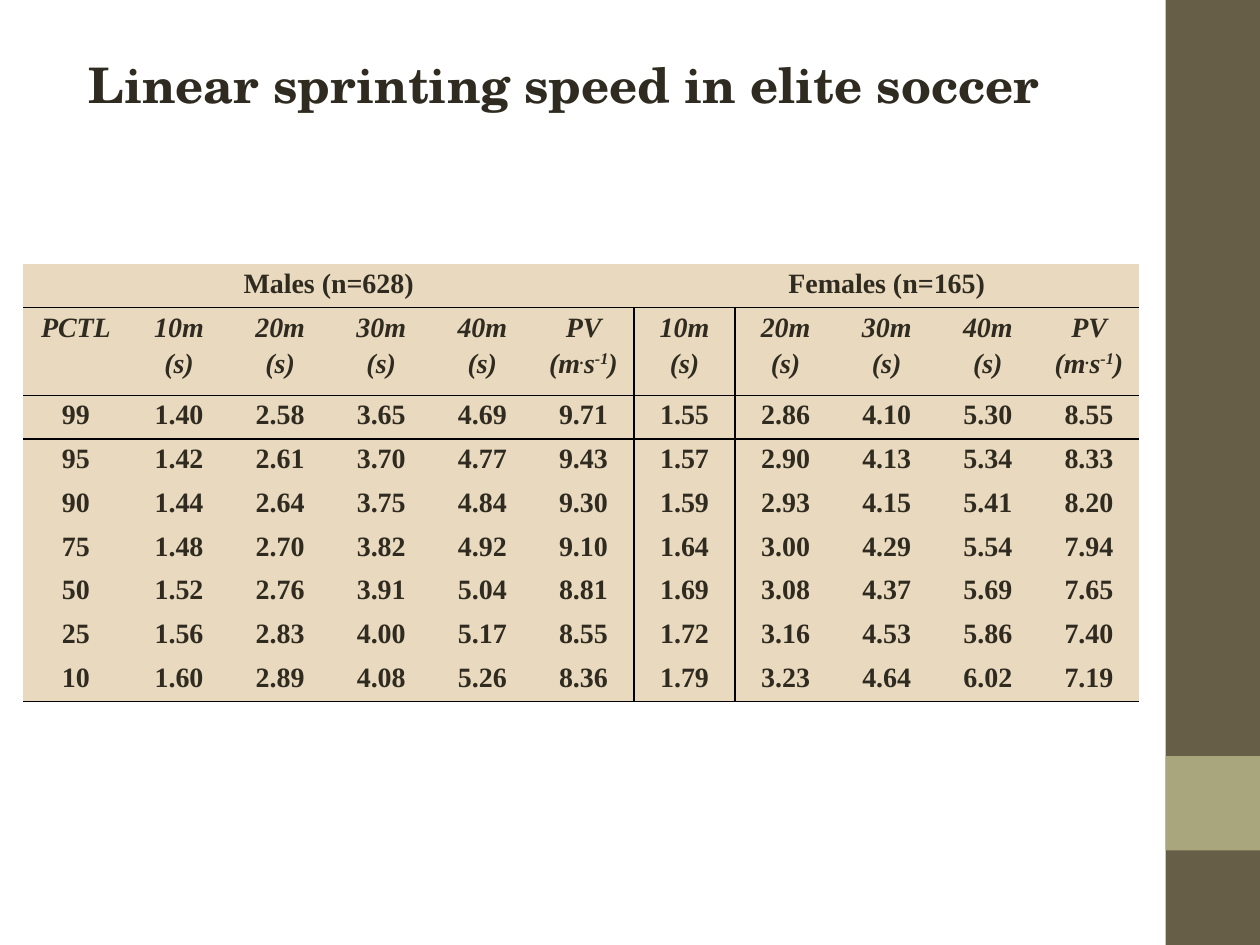
import lxml.etree
import pptx
import pptx.dml.color
import pptx.enum.shapes
import pptx.enum.text
import pptx.oxml.ns
import pptx.util

RGBColor = pptx.dml.color.RGBColor
INK = RGBColor(0x2F, 0x2B, 0x20)
BROWN = RGBColor(0x67, 0x5E, 0x47)
OLIVE = RGBColor(0xA9, 0xA5, 0x7C)
SAND = RGBColor(0xE9, 0xD9, 0xBE)
BLACK = RGBColor(0, 0, 0)

PLAIN_STYLE = "{2D5ABB26-0587-4C30-8999-92F81FD0307C}"
DISTANCES = ["10m (s)", "20m (s)", "30m (s)", "40m (s)", "PV (m^.^s^-1^)"]
GROUPS = {0: ("Males (n=628)", 6), 6: ("Females (n=165)", 5)}
PERCENTILES = [
    "99 1.40 2.58 3.65 4.69 9.71 1.55 2.86 4.10 5.30 8.55",
    "95 1.42 2.61 3.70 4.77 9.43 1.57 2.90 4.13 5.34 8.33",
    "90 1.44 2.64 3.75 4.84 9.30 1.59 2.93 4.15 5.41 8.20",
    "75 1.48 2.70 3.82 4.92 9.10 1.64 3.00 4.29 5.54 7.94",
    "50 1.52 2.76 3.91 5.04 8.81 1.69 3.08 4.37 5.69 7.65",
    "25 1.56 2.83 4.00 5.17 8.55 1.72 3.16 4.53 5.86 7.40",
    "10 1.60 2.89 4.08 5.26 8.36 1.79 3.23 4.64 6.02 7.19",
]


class SlideBuilder:
    """Holds the text styles and the current slide, measured in a 40 by 30 grid."""

    title = {"name": "TeX Gyre Schola", "size": pptx.util.Pt(28), "bold": True}
    body = {"name": "Times New Roman", "size": pptx.util.Pt(16), "bold": True}

    def __init__(self, prs):
        self.s = prs.slides.add_slide(prs.slide_layouts[6])
        self.col = prs.slide_width / 40
        self.row = prs.slide_height / 30

    def place(self, x, y, w, h):
        return [int(n) for n in (x * self.col, y * self.row, w * self.col, h * self.row)]

    def band(self, x, y, w, h, color):
        sp = self.s.shapes.add_shape(
            pptx.enum.shapes.MSO_SHAPE.RECTANGLE, *self.place(x, y, w, h))
        sp.shadow.inherit = False
        sp.fill.solid()
        sp.fill.fore_color.rgb = color
        sp.line.fill.background()

    def text(self, tf, text, style, **extra):
        p = tf.paragraphs[0]
        p.alignment = pptx.enum.text.PP_ALIGN.CENTER
        for i, part in enumerate(text.split("^")):
            r = p.add_run()
            r.text = part
            for name, value in {**style, **extra}.items():
                setattr(r.font, name, value)
            r.font.color.rgb = INK
            if i % 2:
                r._r.get_or_add_rPr().set("baseline", "30000")
        return p

    def heading(self, x, y, w, h, text):
        tf = self.s.shapes.add_textbox(*self.place(x, y, w, h)).text_frame
        tf.word_wrap = True
        self.text(tf, text, self.title)

    def border(self, cell, side):
        tag = pptx.oxml.ns.qn
        ln = lxml.etree.SubElement(cell._tc.get_or_add_tcPr(), tag("a:ln" + side), w="12700")
        fill = lxml.etree.SubElement(ln, tag("a:solidFill"))
        lxml.etree.SubElement(fill, tag("a:srgbClr"), val=str(BLACK))

    def cell(self, cell, text, sides, italic):
        margins = {"margin_left": 0.08, "margin_right": 0.08, "margin_top": 0, "margin_bottom": 0}
        for name, value in margins.items():
            setattr(cell, name, pptx.util.Inches(value))
        for side in sides:
            self.border(cell, side)
        cell.fill.solid()
        cell.fill.fore_color.rgb = SAND
        if text:
            self.text(cell.text_frame, text, self.body, italic=italic).line_spacing = 1.15

    def table(self, x, y, widths, heights, rows, spans):
        box = self.place(x, y, sum(widths), sum(heights))
        table = self.s.shapes.add_table(len(rows), len(widths), *box).table
        table.first_row = table.horz_banding = False
        table._tbl.tblPr.find(pptx.oxml.ns.qn("a:tableStyleId")).text = PLAIN_STYLE
        for column, width in zip(table.columns, widths):
            column.width = int(width * self.col)
        for row, height in zip(table.rows, heights):
            row.height = int(height * self.row)
        last = len(rows) - 1
        for i, texts in enumerate(rows):
            for j, text in enumerate(texts):
                rules = {"L": i > 0 and j == 6, "R": i > 0 and j == 5,
                         "T": i in (1, 2), "B": i in (0, 1, last)}
                sides = [side for side, shown in rules.items() if shown]
                self.cell(table.cell(i, j), text, sides, i == 1)
        for start, (_, count) in spans.items():
            table.cell(0, start).merge(table.cell(0, start + count - 1))


def main():
    prs = pptx.Presentation()
    prs.slide_width = pptx.util.Inches(10)
    prs.slide_height = pptx.util.Inches(7.5)
    b = SlideBuilder(prs)
    b.band(37, 0, 3, 30, BROWN)
    b.band(37, 24, 3, 3, OLIVE)
    groups = [GROUPS[j][0] if j in GROUPS else "" for j in range(11)]
    rows = [groups, ["PCTL"] + DISTANCES * 2] + [line.split() for line in PERCENTILES]
    b.table(0.74, 8.38, [3.34] + [3.21] * 10, [1.39, 2.78] + [1.39] * 7, rows, GROUPS)
    b.heading(1.6, 1.52, 32.6, 2.28, "Linear sprinting speed in elite soccer")
    prs.save("out.pptx")


if __name__ == "__main__":
    main()
